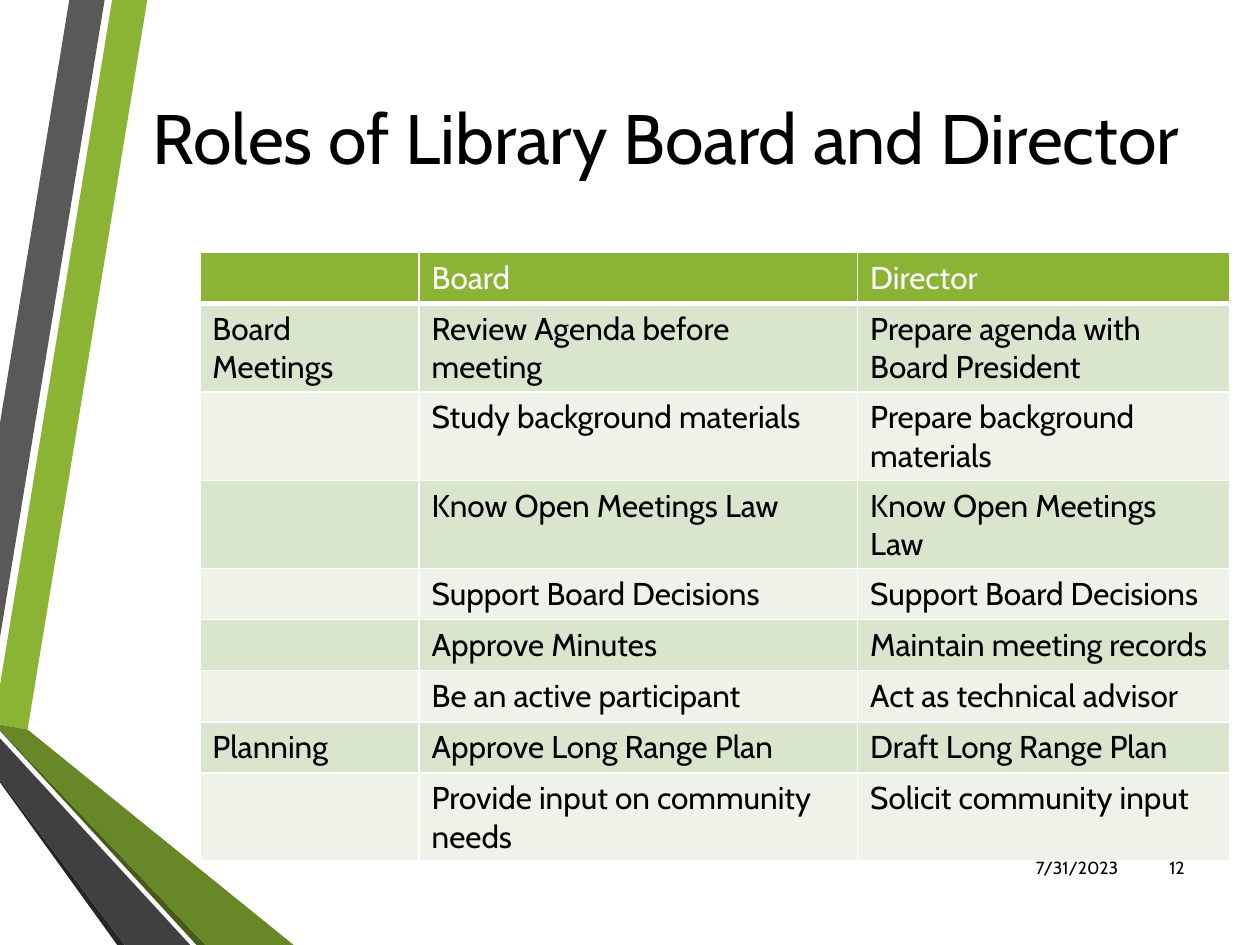
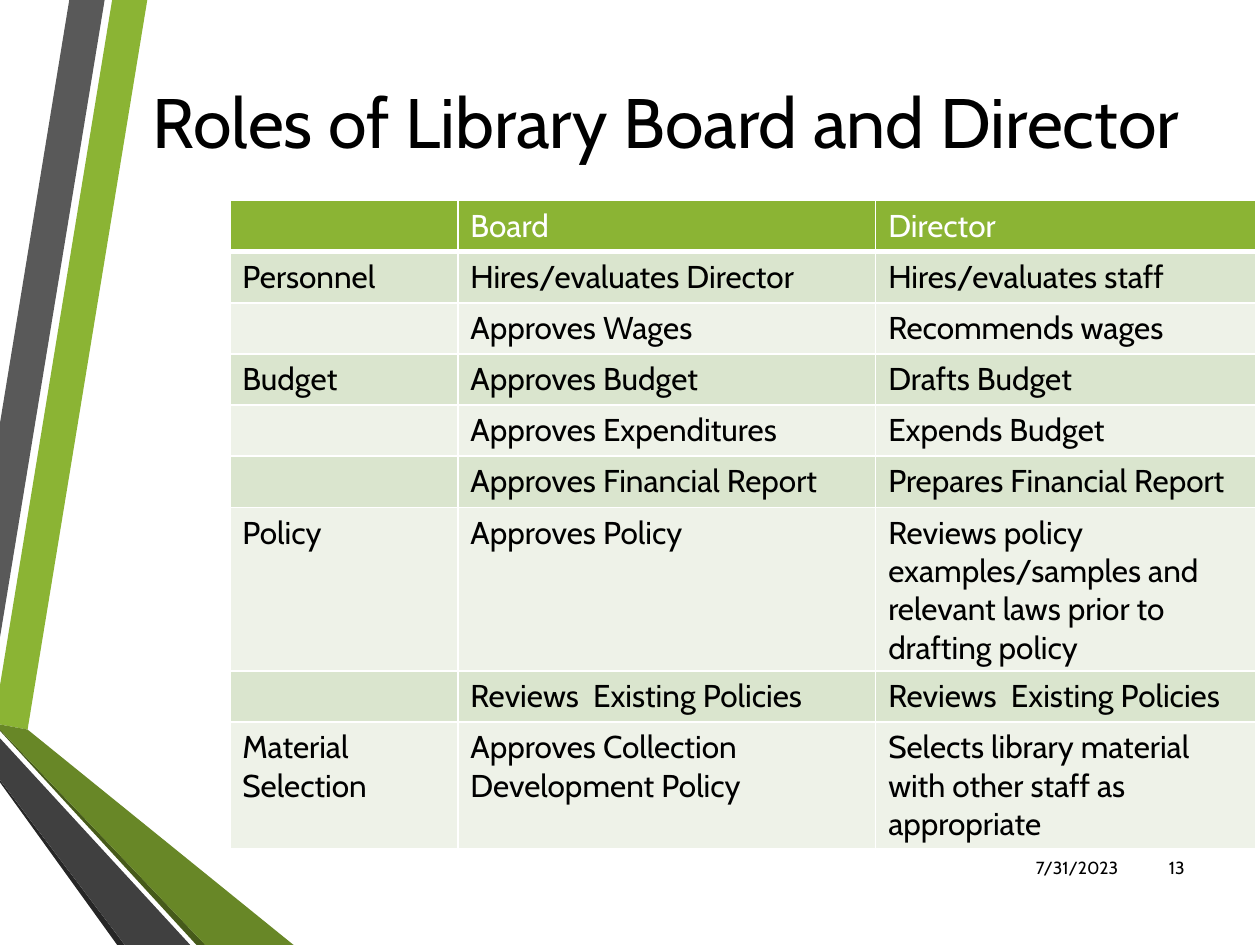
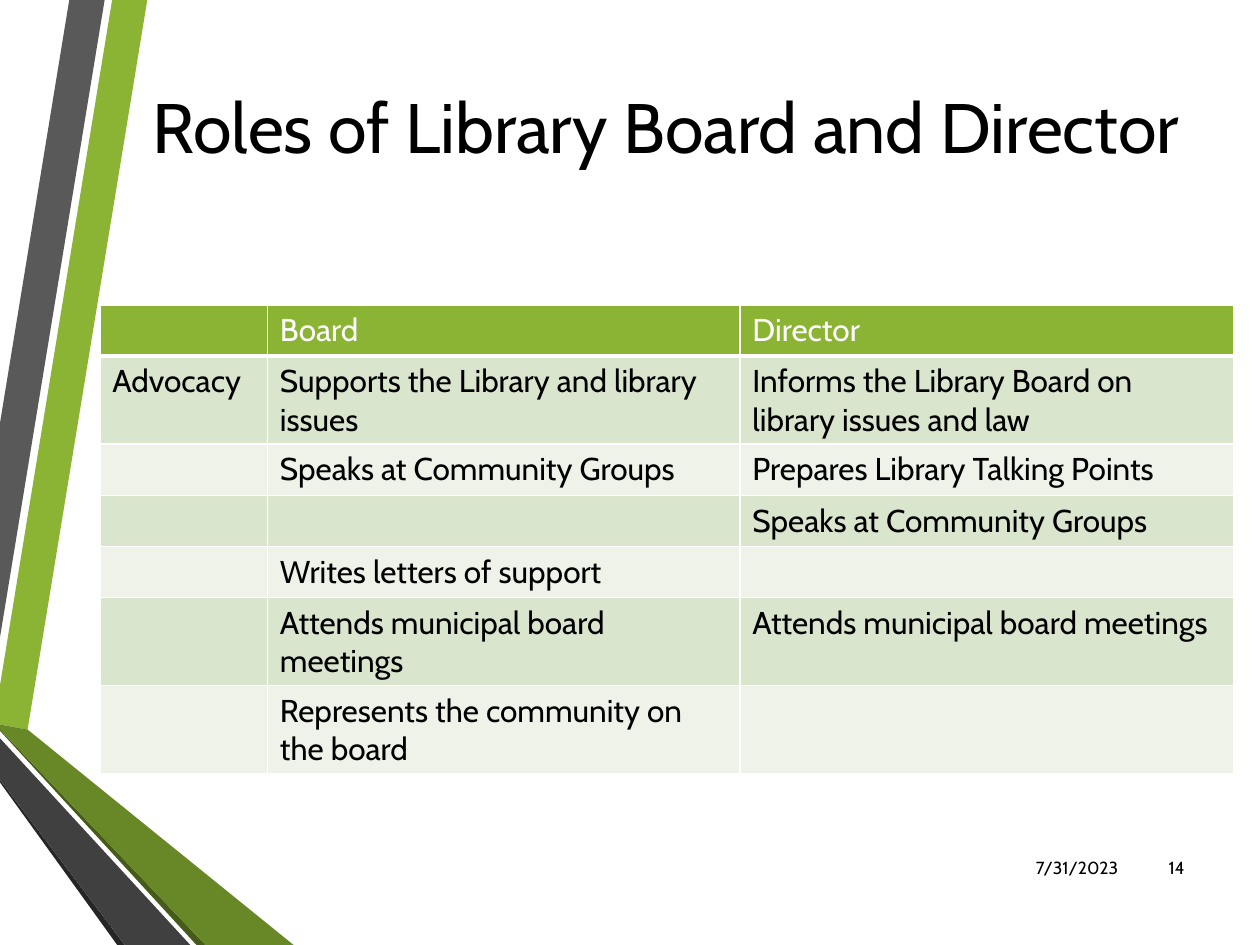
"""Build three slides comparing the roles of a library board and its director."""
from dataclasses import dataclass

from lxml.etree import fromstring
from pptx import Presentation
from pptx.dml.color import RGBColor
from pptx.enum.text import MSO_ANCHOR, PP_ALIGN
from pptx.util import Pt


@dataclass(frozen=True)
class Theme:
    font: str = "Cabin"
    title_size: int = 40
    table_size: int = 18
    footer_size: int = 10
    text: str = "000000"
    white: str = "FFFFFF"
    green: str = "8BB434"
    deep_green: str = "688727"
    shade_green: str = "465A1A"
    gray: str = "595959"
    deep_gray: str = "404040"
    shade_gray: str = "262626"
    odd_row: str = "DAE5CE"
    even_row: str = "EEF2E8"


theme = Theme()
TITLE = "Roles of Library Board and Director"
DATE = "7/31/2023"
FIRST_NUMBER = 12
ROW_HEIGHT = 29.2
HEADER = ("", "Board", "Director")
DRAWING_NS = "http://schemas.openxmlformats.org/drawingml/2006/main"

RIBBONS = [
    (theme.green, [(0, 391.7), (0, 414), (15.8, 416.9), (84.2, 0), (64.1, 0)]),
    (theme.gray, [(59.8, 0), (39.6, 0), (0, 241.9), (0, 364.3)]),
    (theme.shade_gray, [(0, 445.7), (0, 447.1), (67, 540), (71.3, 540)]),
    (theme.shade_green, [(0, 416.9), (0, 417.6), (112.3, 540), (117.4, 540)]),
    (theme.deep_green, [(0, 416.9), (117.4, 540), (167.8, 540), (15.8, 416.9), (0, 414)]),
    (theme.deep_gray, [(0, 445.7), (71.3, 540), (108.7, 540), (0, 421.9)]),
]

PAGES = [
    {
        "title_height": 84,
        "corner": (114.2, 144.4),
        "columns": (125.3, 250.6, 212.4),
        "rows": [
            ("Board Meetings", "Review Agenda before meeting", "Prepare agenda with Board President"),
            ("", "Study background materials", "Prepare background materials"),
            ("", "Know Open Meetings Law", "Know Open Meetings Law"),
            ("", "Support Board Decisions", "Support Board Decisions"),
            ("", "Approve Minutes", "Maintain meeting records"),
            ("", "Be an active participant", "Act as technical advisor"),
            ("Planning", "Approve Long Range Plan", "Draft Long Range Plan"),
            ("", "Provide input on community needs", "Solicit community input"),
        ],
    },
    {
        "title_height": 66,
        "corner": (131.3, 114.7),
        "columns": (130.3, 238.8, 217.4),
        "rows": [
            ("Personnel", "Hires/evaluates Director", "Hires/evaluates staff"),
            ("", "Approves Wages", "Recommends wages"),
            ("Budget", "Approves Budget", "Drafts Budget"),
            ("", "Approves Expenditures", "Expends Budget"),
            ("", "Approves Financial Report", "Prepares Financial Report"),
            ("Policy", "Approves Policy",
             "Reviews policy examples/samples and relevant laws prior to drafting policy"),
            ("", "Reviews  Existing Policies", "Reviews  Existing Policies"),
            ("Material Selection", "Approves Collection Development Policy",
             "Selects library material with other staff as appropriate"),
        ],
    },
    {
        "title_height": 72,
        "corner": (57, 174.2),
        "columns": (95.8, 270, 282.2),
        "rows": [
            ("Advocacy", "Supports the Library and library issues",
             "Informs the Library Board on library issues and law"),
            ("", "Speaks at Community Groups", "Prepares Library Talking Points"),
            ("", "", "Speaks at Community Groups"),
            ("", "Writes letters of support", ""),
            ("", "Attends municipal board meetings", "Attends municipal board meetings"),
            ("", "Represents the community on the board", ""),
        ],
    },
]


def write(frame, text, size, color, align):
    para = frame.paragraphs[0]
    para.text = text
    para.alignment = align
    para.font.name = theme.font
    para.font.size = Pt(size)
    para.font.bold = False
    para.font.color.rgb = RGBColor.from_string(color)


def add_text(page, left, top, width, height, text, size, align):
    box = page.shapes.add_textbox(Pt(left), Pt(top), Pt(width), Pt(height))
    box.text_frame.word_wrap = True
    box.text_frame.vertical_anchor = MSO_ANCHOR.MIDDLE
    write(box.text_frame, text, size, theme.text, align)


deck = Presentation()
deck.slide_width, deck.slide_height = Pt(720), Pt(540)

for number, content in enumerate(PAGES, FIRST_NUMBER):
    page = deck.slides.add_slide(deck.slide_layouts[6])

    for color, points in RIBBONS:
        corners = [(Pt(x), Pt(y)) for x, y in points]
        builder = page.shapes.build_freeform(*corners[0])
        builder.add_line_segments(corners[1:], close=True)
        ribbon = builder.convert_to_shape()
        ribbon.shadow.inherit = False
        ribbon.fill.solid()
        ribbon.fill.fore_color.rgb = RGBColor.from_string(color)
        ribbon.line.fill.background()

    add_text(page, 77, 36, 607, content["title_height"], TITLE, theme.title_size, PP_ALIGN.CENTER)

    rows = [HEADER, *content["rows"]]
    left, top = content["corner"]
    widths = content["columns"]
    table = page.shapes.add_table(
        len(rows), len(widths), Pt(left), Pt(top), Pt(sum(widths)), Pt(ROW_HEIGHT * len(rows))
    ).table
    table.first_row = table.horz_banding = False
    for column, width in zip(table.columns, widths):
        column.width = Pt(width)

    for row_index, row in enumerate(rows):
        is_header = row_index == 0
        table.rows[row_index].height = Pt(ROW_HEIGHT)
        row_fill = theme.green if is_header else (theme.even_row, theme.odd_row)[row_index % 2]
        for column_index, text in enumerate(row):
            cell = table.cell(row_index, column_index)
            cell.fill.solid()
            cell.fill.fore_color.rgb = RGBColor.from_string(row_fill)
            color = theme.white if is_header else theme.text
            write(cell.text_frame, text, theme.table_size, color, PP_ALIGN.LEFT)
            properties = cell._tc.get_or_add_tcPr()
            for position, side in enumerate("LRTB"):
                weight = Pt(3 if is_header and side == "B" else 1)
                properties.insert(position, fromstring(
                    f'<a:ln{side} xmlns:a="{DRAWING_NS}" w="{weight}"><a:solidFill>'
                    f'<a:srgbClr val="{theme.white}"/></a:solidFill></a:ln{side}>'
                ))

    add_text(page, 578, 481, 68, 29, DATE, theme.footer_size, PP_ALIGN.RIGHT)
    add_text(page, 650, 481, 34, 29, str(number), theme.footer_size, PP_ALIGN.RIGHT)

deck.save("out.pptx")
